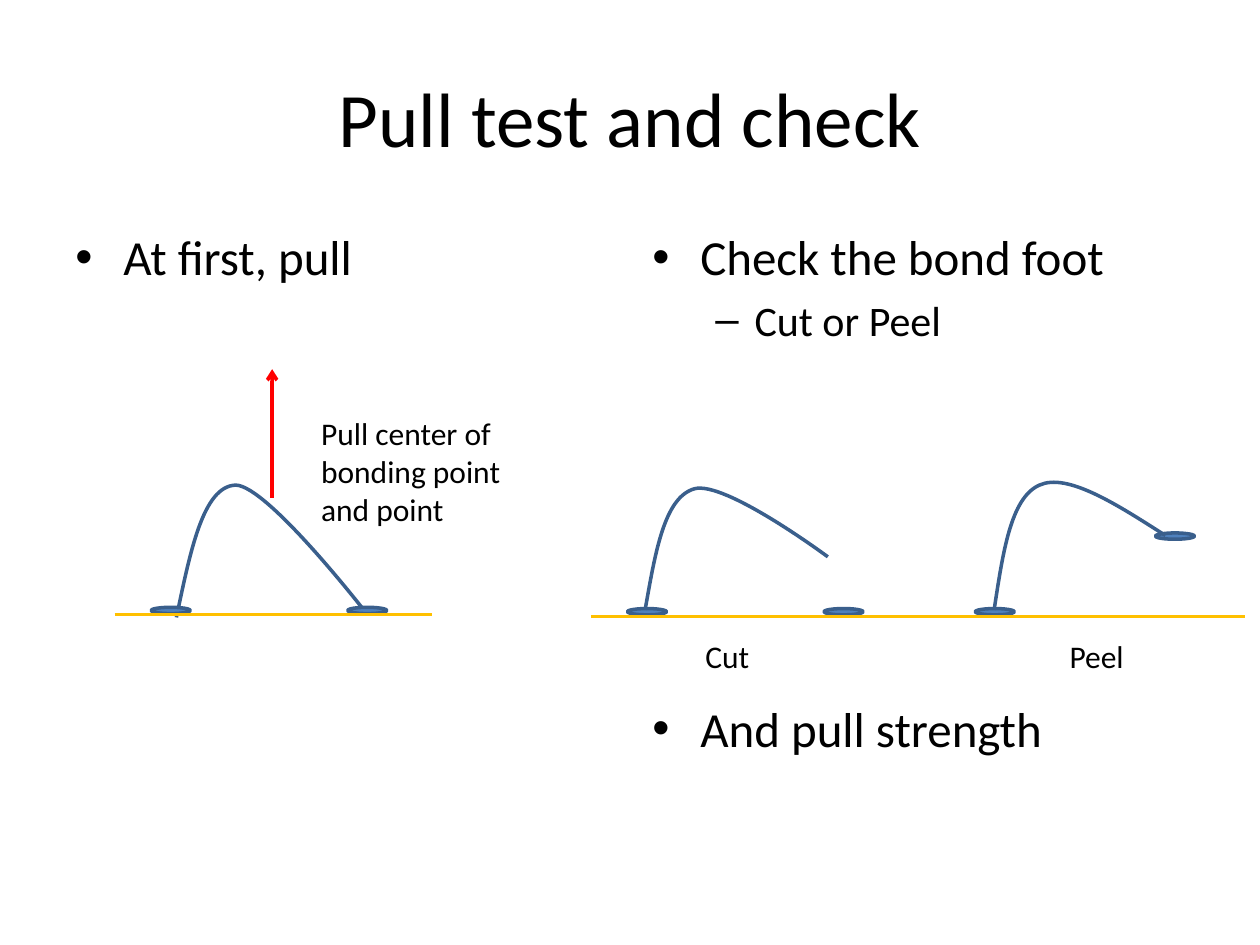
from pptx import Presentation
from pptx.dml.color import RGBColor
from pptx.enum.shapes import MSO_CONNECTOR, MSO_SHAPE
from pptx.enum.text import MSO_ANCHOR, PP_ALIGN
from pptx.oxml.ns import qn
from pptx.util import Inches, Pt
from lxml.etree import SubElement

FONT = "Calibri"
BLACK, WIRE, FOOT, PULL, PAD = "000000", "3A5F8C", "4F81BD", "FF0000", "FFC000"
FOOT_WIDTH, FOOT_HEIGHT = 0.31, 0.05


def color(value):
    return RGBColor.from_string(value)


def set_line(shape, value, width=2):
    shape.line.color.rgb = color(value)
    shape.line.width = Pt(width)


def add_box(page, left, top, width, height):
    box = page.shapes.add_textbox(
        Inches(left), Inches(top), Inches(width), Inches(height))
    box.text_frame.word_wrap = True
    return box.text_frame


def add_span(para, text, size):
    span = para.add_run()
    span.text = text
    span.font.name = FONT
    span.font.size = Pt(size)
    span.font.color.rgb = color(BLACK)


def add_label(page, text, left, top, width, height, size=18):
    frame = add_box(page, left, top, width, height)
    add_span(frame.paragraphs[0], text, size)
    return frame


def set_bullet(para, mark, margin, hanging):
    properties = para._p.get_or_add_pPr()
    properties.set("marL", str(Inches(margin)))
    properties.set("indent", str(-Inches(hanging)))
    SubElement(properties, qn("a:buFont"), typeface="Arial")
    SubElement(properties, qn("a:buChar"), char=mark)


def add_bullets(page, left, items):
    """Each item is (text, level, space before in points)."""
    styles = [("•", 0.38, 0.38, 28), ("–", 0.81, 0.31, 24)]
    frame = add_box(page, left, 1.75, 4.42, 4.95)
    for index, (text, level, space) in enumerate(items):
        para = frame.add_paragraph() if index else frame.paragraphs[0]
        mark, margin, hanging, size = styles[level]
        para.level = level
        set_bullet(para, mark, margin, hanging)
        if index:
            para.space_before = Pt(space)
        add_span(para, text, size)


def add_wire(page, points):
    """Draw cubic curves through every third point; the others are controls."""
    track = [(Inches(x), Inches(y)) for x, y in points]
    builder = page.shapes.build_freeform(*track[0])
    builder.add_line_segments(track[3::3], close=False)
    wire = builder.convert_to_shape()
    segments = list(wire.element.iter(qn("a:lnTo")))
    for index, segment in enumerate(segments):
        segment.clear()
        segment.tag = qn("a:cubicBezTo")
        for x, y in track[3 * index + 1:3 * index + 4]:
            SubElement(segment, qn("a:pt"),
                       x=str(x - wire.left), y=str(y - wire.top))
    wire.shadow.inherit = False
    wire.fill.background()
    set_line(wire, WIRE)


def add_foot(page, left, top):
    foot = page.shapes.add_shape(
        MSO_SHAPE.OVAL, Inches(left), Inches(top),
        Inches(FOOT_WIDTH), Inches(FOOT_HEIGHT))
    foot.shadow.inherit = False
    foot.fill.solid()
    foot.fill.fore_color.rgb = color(FOOT)
    set_line(foot, WIRE)


def add_line(page, start, end, value, width=2, arrow=False):
    line = page.shapes.add_connector(
        MSO_CONNECTOR.STRAIGHT, *map(Inches, start + end))
    set_line(line, value, width)
    properties = line.element.spPr
    if arrow:
        SubElement(properties.find(qn("a:ln")), qn("a:tailEnd"), type="arrow")
    SubElement(properties, qn("a:effectLst"))


def main():
    deck = Presentation()
    deck.slide_width, deck.slide_height = Inches(10), Inches(7.5)
    page = deck.slides.add_slide(deck.slide_layouts[6])

    title = add_label(page, "Pull test and check", 0.5, 0.3, 9, 1.25, 44)
    title.vertical_anchor = MSO_ANCHOR.MIDDLE
    title.paragraphs[0].alignment = PP_ALIGN.CENTER
    add_bullets(page, 0.5, [("At first, pull", 0, 0)])
    add_bullets(page, 5.08, [("Check the bond foot", 0, 0),
                             ("Cut or Peel", 1, 5),
                             ("And pull strength", 0, 202)])

    add_wire(page, [(1.4, 4.9), (1.51, 4.38), (1.61, 3.86), (1.87, 3.85),
                    (2.12, 3.85), (2.91, 4.87), (2.91, 4.87)])
    for left in (2.76, 1.2):
        add_foot(page, left, 4.82)
    add_line(page, (2.16, 3.95), (2.16, 2.93), PULL, arrow=True)
    add_label(page, "Pull center of bonding point and point",
              2.45, 3.24, 2.05, 1.01)

    for left, top in ((6.54, 4.83), (4.98, 4.83), (9.17, 4.23), (7.74, 4.83)):
        add_foot(page, left, top)
    add_wire(page, [(5.12, 4.84), (5.2, 4.39), (5.27, 3.95), (5.51, 3.88),
                    (5.75, 3.81), (6.57, 4.42), (6.57, 4.42)])
    add_wire(page, [(7.89, 4.84), (7.96, 4.39), (8.02, 3.95), (8.25, 3.85),
                    (8.47, 3.75), (8.86, 4), (9.25, 4.25)])
    for text, left in (("Cut", 5.5), ("Peel", 8.39)):
        add_label(page, text, left, 5.01, 0.7, 0.4)

    for start, end, top in ((0.91, 3.43, 4.88), (4.69, 9.88, 4.89)):
        add_line(page, (start, top), (end, top), PAD, width=1.75)

    deck.save("out.pptx")


if __name__ == "__main__":
    main()
